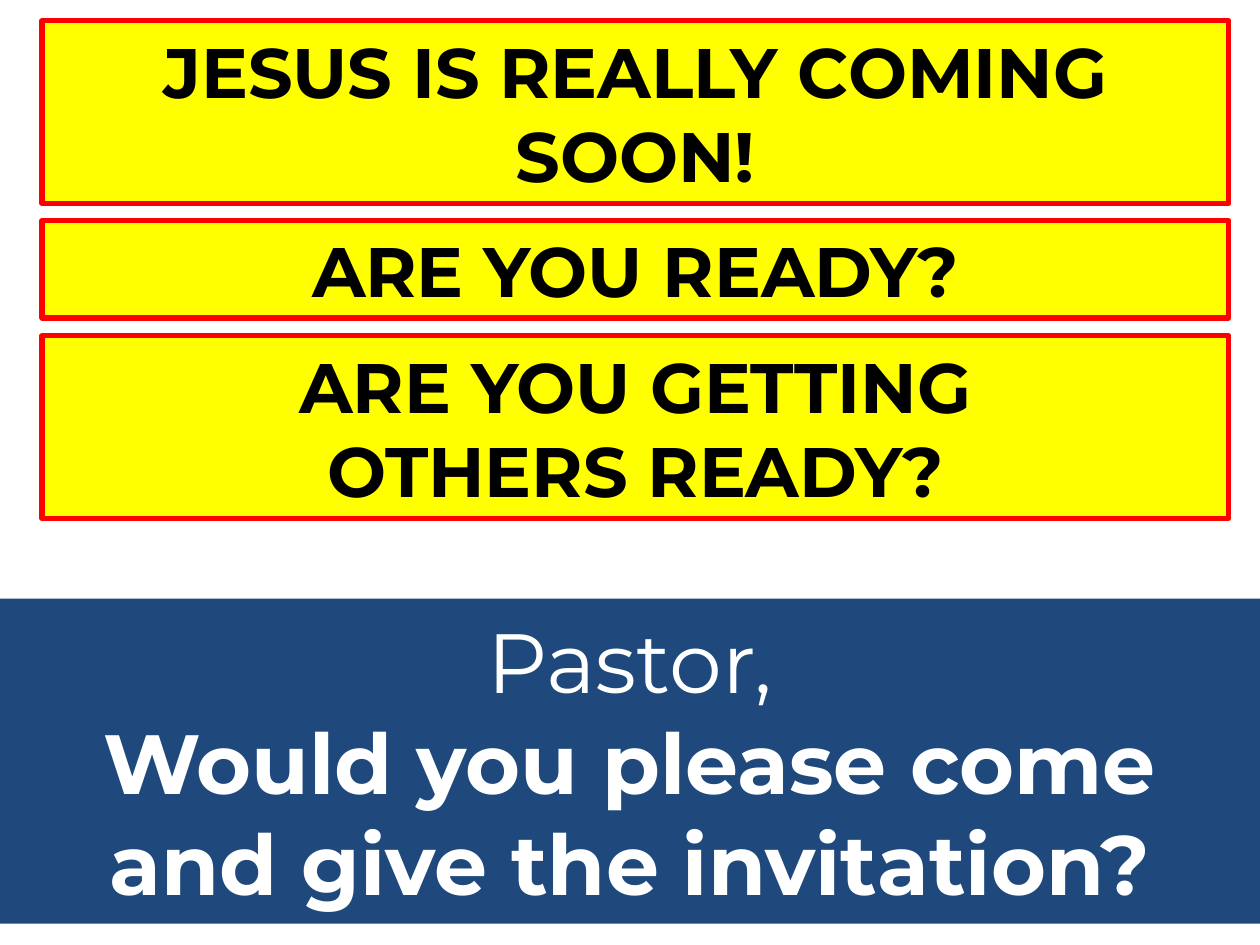
from pptx import Presentation
from pptx.dml.color import RGBColor
from pptx.enum.shapes import MSO_SHAPE
from pptx.enum.text import MSO_ANCHOR, MSO_AUTO_SIZE, PP_ALIGN
from pptx.util import Cm, Pt

COLORS = {"banner": "FFFF00", "border": "FF0000", "ink": "000000",
          "panel": "1F497D", "light": "FFFFFF"}


def add_text_block(left, top, width, height, fill, lines, size, color):
    """Add a filled rectangle with centred lines given as (text, bold)."""
    block = slide.shapes.add_shape(
        MSO_SHAPE.RECTANGLE, Cm(left), Cm(top), Cm(width), Cm(height))
    block.shadow.inherit = False
    block.fill.solid()
    block.fill.fore_color.rgb = RGBColor.from_string(COLORS[fill])
    block.line.fill.background()
    frame = block.text_frame
    frame.word_wrap = True
    frame.vertical_anchor = MSO_ANCHOR.MIDDLE
    for index, (text, bold) in enumerate(lines):
        paragraph = frame.add_paragraph() if index else frame.paragraphs[0]
        paragraph.text = text
        paragraph.alignment = PP_ALIGN.CENTER
        paragraph.font.name = "Montserrat"
        paragraph.font.size = Pt(size)
        paragraph.font.bold = bold
        paragraph.font.color.rgb = RGBColor.from_string(COLORS[color])
    return block


presentation = Presentation()
presentation.slide_width = Cm(25.4)
presentation.slide_height = Cm(19.05)
slide = presentation.slides.add_slide(presentation.slide_layouts[6])

# Appeal to the audience
appeals = [
    (0.42, 3.68, ["JESUS IS REALLY COMING SOON!"]),
    (4.45, 1.96, ["ARE YOU READY?"]),
    (6.77, 3.68, ["ARE YOU GETTING", "OTHERS READY?"]),
]
for top, height, lines in appeals:
    appeal = add_text_block(0.85, top, 23.92, height, "banner",
                            [(line, True) for line in lines], 40, "ink")
    appeal.line.color.rgb = RGBColor.from_string(COLORS["border"])
    appeal.line.width = Pt(3)
    appeal.text_frame.auto_size = MSO_AUTO_SIZE.SHAPE_TO_FIT_TEXT

# Invitation to the pastor
invitation = [("Pastor,", False), ("Would you please come", True),
              ("and give the invitation?", True)]
add_text_block(0, 12.07, 25.4, 6.55, "panel", invitation, 48, "light")

presentation.save("out.pptx")
